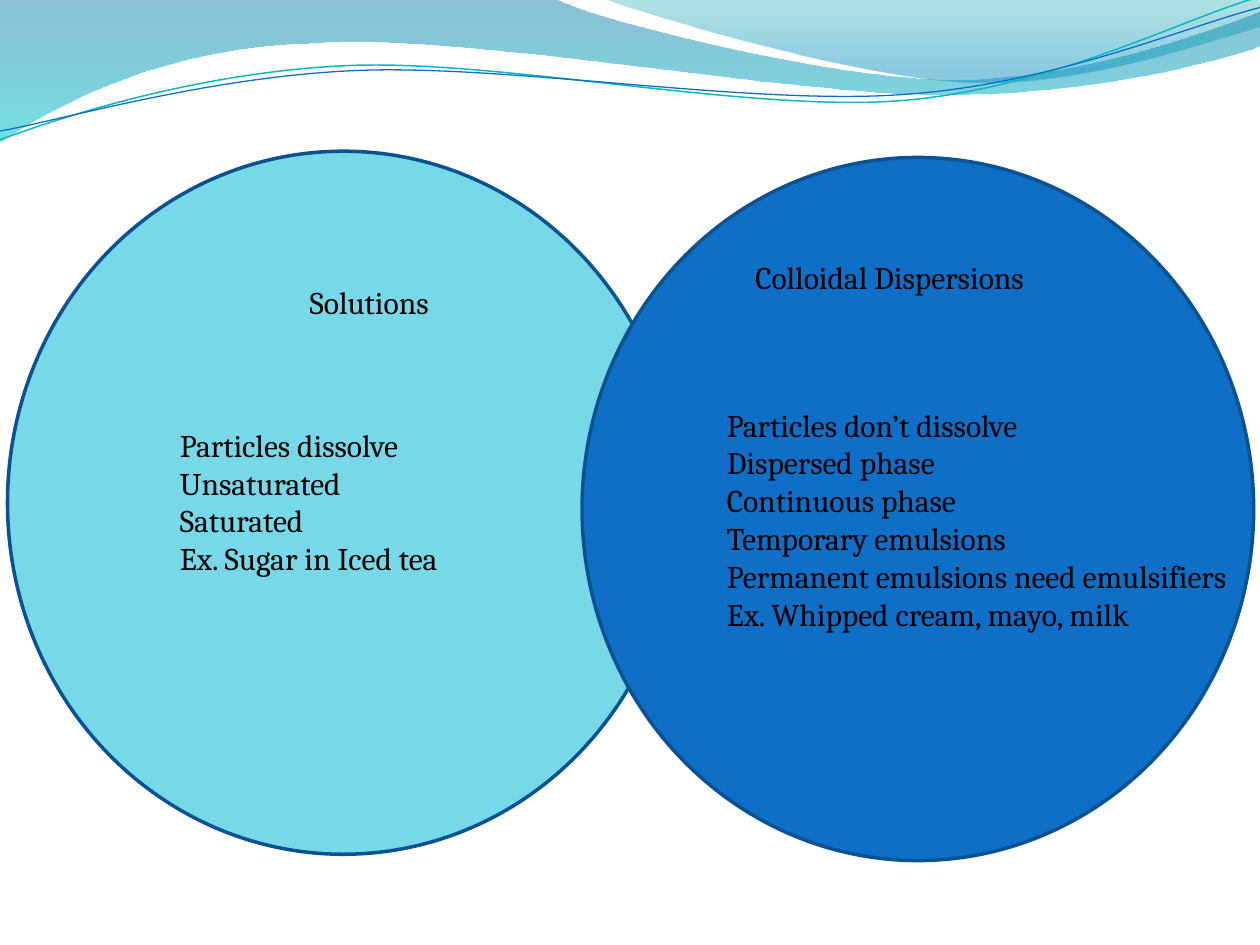
from math import cos, radians, sin

from lxml import etree
from pptx import Presentation
from pptx.dml.color import RGBColor
from pptx.enum.shapes import MSO_SHAPE
from pptx.enum.text import MSO_AUTO_SIZE, PP_ALIGN
from pptx.oxml.ns import qn
from pptx.util import Inches, Pt

OVAL = MSO_SHAPE.OVAL
LEFT, CENTER = PP_ALIGN.LEFT, PP_ALIGN.CENTER
FIT_SHAPE = MSO_AUTO_SIZE.SHAPE_TO_FIT_TEXT

WIDTH, HEIGHT = 10, 7.5
FONT = "Cambria"
BLACK = RGBColor(0x00, 0x00, 0x00)
AQUA = RGBColor(0x77, 0xD9, 0xE8)
BLUE = RGBColor(0x0F, 0x6F, 0xC6)
NAVY = RGBColor(0x0B, 0x52, 0x92)
TEAL = RGBColor(0x0A, 0xB8, 0xBF)
DEEP_SEA = RGBColor(0x00, 0x74, 0xA1)
LAGOON = RGBColor(0x00, 0xC6, 0xCF)
SEA_GREEN = RGBColor(0x00, 0xA1, 0xA9)
SKY = RGBColor(0x00, 0x8B, 0xBF)
STRAND_TILT = 357.3

# Each outline is a start point followed by segments:
# two numbers are a straight line, six are a Bezier curve.
# Gradient stops are (position, colour, opacity in percent).
WIDE_WAVE = (
    [(0, 0), (4.4, -0.01), (4.76, 0.17, 6.64, 0.63, 7.58, 0.63),
     (8.53, 0.63, 9.58, 0.26, 10, 0.09), (10.01, 0.36),
     (9.83, 0.44, 8.7, 0.76, 7.46, 0.75), (6.22, 0.75, 3.82, 0.28, 2.57, 0.34),
     (1.29, 0.36, 0.46, 0.83, -0.01, 1.13), (0, 0)],
    [(0, DEEP_SEA, 45), (1, LAGOON, 55)])
RIGHT_WAVE = (
    [(4.79, -0.01), (5.09, 0.11, 6.82, 0.62, 7.69, 0.65),
     (8.56, 0.69, 9.61, 0.32, 10, 0.21), (10, 0), (4.79, -0.01)],
    [(0, SEA_GREEN, 30), (0.8, SKY, 45)])
# Strands: outline, centre of the tilt, colour, width.
TEAL_STRAND = (
    [(0, 1.11), (0.48, 0.93, 1.58, 0.57, 2.77, 0.52),
     (3.95, 0.47, 5.93, 0.89, 7.13, 0.8), (8.33, 0.71, 9.38, 0.15, 9.98, -0.02)],
    (4.99, 0.58), TEAL, 0.85)
BLUE_STRAND = (
    [(0, 1.04), (0.47, 0.96, 1.64, 0.61, 2.83, 0.56),
     (4.03, 0.51, 5.97, 0.84, 7.17, 0.75), (8.36, 0.67, 9.41, 0.21, 10, 0.06)],
    (5, 0.59), BLUE, 0.75)


def untilt(point, center):
    """Turn a point back, so that tilting the finished shape puts it in place."""
    angle = radians(360 - STRAND_TILT)
    x, y = point[0] - center[0], point[1] - center[1]
    return (center[0] + x * cos(angle) - y * sin(angle),
            center[1] + x * sin(angle) + y * cos(angle))


def add_outline(shapes, outline, close, tilt_center=None):
    """Draw straight legs through all points, then join threes into curves."""
    points = [segment[i:i + 2] for segment in outline for i in range(0, len(segment), 2)]
    if tilt_center:
        points = [untilt(point, tilt_center) for point in points]
    points = [(Inches(x), Inches(y)) for x, y in points]
    builder = shapes.build_freeform(*points[0])
    builder.add_line_segments(points[1:], close=close)
    shape = builder.convert_to_shape()
    shape.shadow.inherit = False
    if tilt_center:
        shape.rotation = STRAND_TILT

    legs = iter(list(shape._element.iter(qn("a:lnTo"))))
    for segment in outline[1:]:
        leg = next(legs)
        if len(segment) == 6:
            curve = etree.Element(qn("a:cubicBezTo"))
            leg.addprevious(curve)
            for part in (leg, next(legs), next(legs)):
                curve.append(part[0])
                part.getparent().remove(part)
    return shape


def add_wave(shapes, outline, stops):
    shape = add_outline(shapes, outline, close=True)
    shape.line.fill.background()
    shape.fill.gradient()
    shape.fill.gradient_angle = 270
    for stop, (position, color, _) in zip(shape.fill.gradient_stops, stops):
        stop.position = position
        stop.color.rgb = color
    colors = list(shape._element.spPr.find(qn("a:gradFill")).iter(qn("a:srgbClr")))
    for color_element, (_, _, opacity) in zip(colors, stops):
        etree.SubElement(color_element, qn("a:alpha")).set("val", str(opacity * 1000))


def add_strand(shapes, outline, tilt_center, color, width):
    shape = add_outline(shapes, outline, close=False, tilt_center=tilt_center)
    shape.fill.background()
    shape.line.color.rgb = color
    shape.line.width = Pt(width)


def add_text(slide, lines, box, size=18, color=BLACK, align=LEFT):
    text_box = slide.shapes.add_textbox(*map(Inches, box))
    frame = text_box.text_frame
    frame.word_wrap = True
    frame.auto_size = FIT_SHAPE
    frame.text = "\n".join(lines)
    for paragraph in frame.paragraphs:
        paragraph.alignment = align
        font = paragraph.runs[0].font
        font.name, font.size, font.color.rgb = FONT, Pt(size), color


def add_circle(slide, box, fill):
    circle = slide.shapes.add_shape(OVAL, *map(Inches, box))
    circle.shadow.inherit = False
    circle.fill.solid()
    circle.fill.fore_color.rgb = fill
    circle.line.color.rgb = NAVY
    circle.line.width = Pt(2)


def add_circle_text(slide, box, heading, heading_area, facts, facts_area):
    """Areas are left and top from the circle's corner, then width and height."""
    left, top = box[:2]

    def place(area):
        x, y, width, height = area
        return left + x, top + y, width, height

    add_text(slide, [heading], place(heading_area), align=CENTER)
    add_text(slide, facts, place(facts_area))


def add_header(slide):
    for wave in (WIDE_WAVE, RIGHT_WAVE):
        add_wave(slide.shapes, *wave)
    strands = slide.shapes.add_group_shape()
    for strand in (TEAL_STRAND, BLUE_STRAND):
        add_strand(strands.shapes, *strand)


def add_venn(slide):
    size = (5.33, 5.58)
    solutions = (0.06, 1.2, *size)
    colloids = (4.62, 1.25, *size)
    add_circle(slide, solutions, AQUA)
    add_circle(slide, colloids, BLUE)
    add_circle_text(
        slide, colloids,
        "Colloidal Dispersions", (0.65, 0.75, 3.58, 0.4),
        ["Particles don’t dissolve", "Dispersed phase", "Continuous phase",
         "Temporary emulsions", "Permanent emulsions need emulsifiers",
         "Ex. Whipped cream, mayo, milk"], (1.05, 1.92, 4.17, 2.52))
    add_circle_text(
        slide, solutions,
        "Solutions", (0.91, 1, 3.92, 0.4),
        ["Particles dissolve", "Unsaturated", "Saturated",
         "Ex. Sugar in Iced tea"], (1.27, 2.13, 3.5, 1.31))


def main():
    presentation = Presentation()
    presentation.slide_width = Inches(WIDTH)
    presentation.slide_height = Inches(HEIGHT)
    slide = presentation.slides.add_slide(presentation.slide_layouts[6])
    add_header(slide)
    add_venn(slide)
    presentation.save("out.pptx")


if __name__ == "__main__":
    main()
